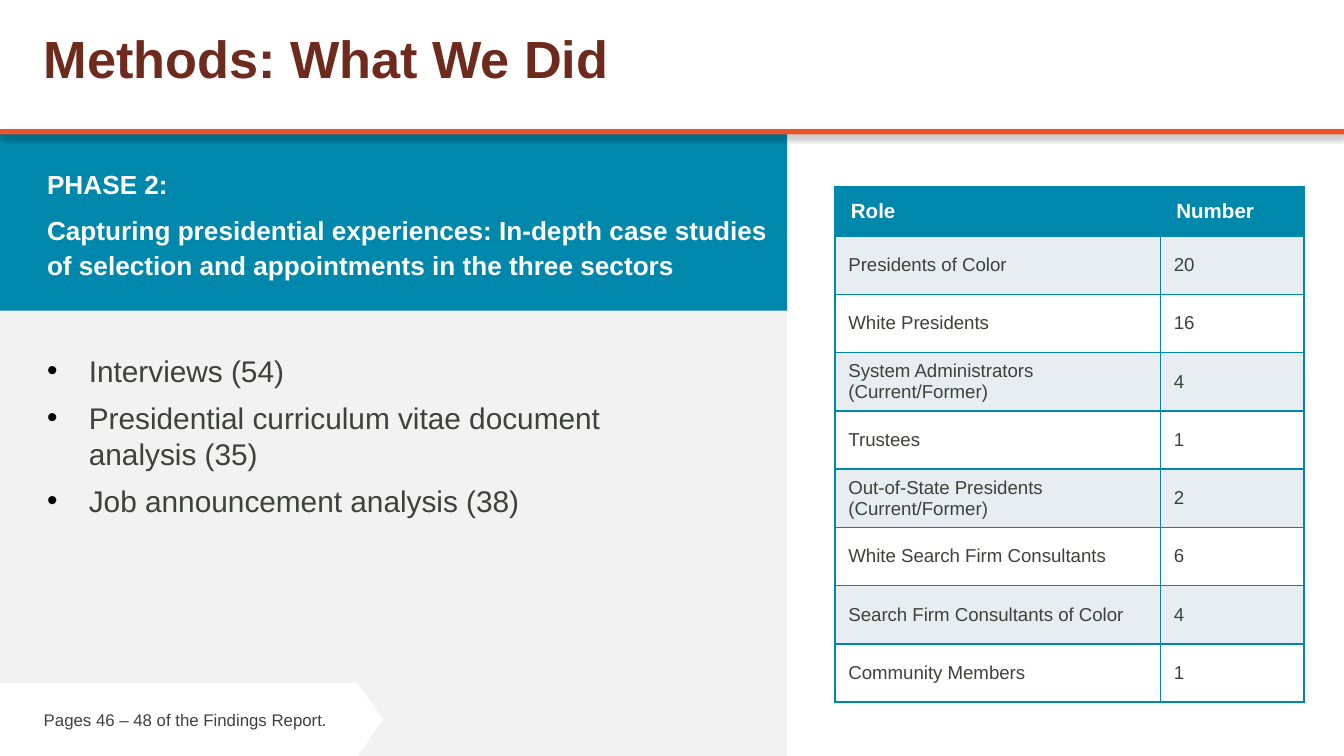
from lxml.etree import SubElement
from pptx import Presentation
from pptx.dml.color import RGBColor
from pptx.enum.shapes import MSO_SHAPE as SHAPE
from pptx.enum.text import MSO_ANCHOR as ANCHOR, PP_ALIGN as ALIGN
from pptx.oxml import parse_xml
from pptx.oxml.ns import nsdecls, qn
from pptx.util import Cm, Pt

COLORS = {
    "teal": "0088AC", "orange": "E95429", "brown": "6E2A1D", "text": "3E413C",
    "panel": "F2F2F2", "band": "E7EDF1", "white": "FFFFFF", "black": "000000",
}
WIDTH, HEIGHT = 25.4, 14.28
PANEL_WIDTH, RULE_TOP, RULE_HEIGHT = 14.88, 2.44, 0.1
BODY_TOP = 2.49

TITLE = {"size": Pt(28), "bold": True, "color": "brown"}
PHASE = {"size": Pt(14), "bold": True, "color": "white"}
BULLET = {"size": Pt(16), "color": "text"}
FOOTNOTE = {"size": Pt(9), "color": "text"}
HEADER = {"size": Pt(11), "bold": True, "color": "white"}
CELL = {"size": Pt(10), "bold": False, "color": "text"}

PHASE_LINES = [
    "PHASE 2:",
    "Capturing presidential experiences: In-depth case studies of selection "
    "and appointments in the three sectors",
]
METHODS = [
    "Interviews (54)",
    "Presidential curriculum vitae document analysis (35)",
    "Job announcement analysis (38)",
]
ROLES = [
    ("Role", "Number"),
    ("Presidents of Color", "20"),
    ("White Presidents", "16"),
    ("System Administrators (Current/Former)", "4"),
    ("Trustees", "1"),
    ("Out-of-State Presidents (Current/Former)", "2"),
    ("White Search Firm Consultants", "6"),
    ("Search Firm Consultants of Color", "4"),
    ("Community Members", "1"),
]


def rgb(name):
    return RGBColor.from_string(COLORS[name])


def set_attrs(obj, values):
    for name, value in values.items():
        setattr(obj, name, value)


def set_font(font, style):
    font.name = "Arial"
    for name, value in style.items():
        if name == "color":
            font.color.rgb = rgb(value)
        else:
            setattr(font, name, value)


def write(tf, lines, style, **paragraph_format):
    for i, line in enumerate(lines):
        p = tf.paragraphs[0] if i == 0 else tf.add_paragraph()
        set_attrs(p, paragraph_format)
        r = p.add_run()
        r.text = line
        set_font(r.font, style)


def set_frame(tf, margins, anchor):
    """Margins are left, top, right and bottom in centimetres."""
    sides = ("margin_left", "margin_top", "margin_right", "margin_bottom")
    set_attrs(tf, dict(zip(sides, map(Cm, margins))))
    set_attrs(tf, {"word_wrap": True, "vertical_anchor": anchor})


def add_block(s, kind, box, color):
    sp = s.shapes.add_shape(kind, *map(Cm, box))
    sp.shadow.inherit = False
    sp.fill.solid()
    sp.fill.fore_color.rgb = rgb(color)
    sp.line.fill.background()
    return sp


def add_drop_shadow(sp):
    effects = sp._element.spPr.find(qn("a:effectLst"))
    effects.append(parse_xml(
        f'<a:outerShdw {nsdecls("a")} blurRad="{Pt(3.1)}" dist="{Pt(1.8)}" '
        'dir="5400000" algn="t" rotWithShape="0">'
        f'<a:srgbClr val="{COLORS["black"]}"><a:alpha val="35000"/></a:srgbClr>'
        '</a:outerShdw>'))


def add_bullet(p):
    pPr = p._p.get_or_add_pPr()
    pPr.set("marL", str(Cm(0.79)))
    pPr.set("indent", str(-Cm(0.79)))
    color = SubElement(pPr, qn("a:buClr"))
    SubElement(color, qn("a:srgbClr"), val=COLORS["black"])
    SubElement(pPr, qn("a:buFont"), typeface="Arial")
    SubElement(pPr, qn("a:buChar"), char="•")


def set_borders(cell, color):
    tcPr = cell._tc.get_or_add_tcPr()
    for i, side in enumerate(("lnL", "lnR", "lnT", "lnB")):
        tcPr.insert(i, parse_xml(
            f'<a:{side} {nsdecls("a")} w="{Pt(1)}"><a:solidFill>'
            f'<a:srgbClr val="{COLORS[color]}"/></a:solidFill></a:{side}>'))


def add_title(s):
    title = s.shapes.title
    box = map(Cm, (0.58, 0.18, 17.78, 1.8))
    set_attrs(title, dict(zip(("left", "top", "width", "height"), box)))
    set_frame(title.text_frame, (0.25, 0.13, 0.25, 0.13), ANCHOR.MIDDLE)
    write(title.text_frame, ["Methods: What We Did"], TITLE, alignment=ALIGN.LEFT)


def add_methods(s):
    tf = s.shapes.add_textbox(*map(Cm, (0.89, 6.53, 12.12, 3.38))).text_frame
    set_frame(tf, (0, 0.13, 0.25, 0.13), ANCHOR.TOP)
    write(tf, METHODS, BULLET, space_after=Pt(6))
    for p in tf.paragraphs:
        add_bullet(p)


def add_phase(s):
    sp = add_block(s, SHAPE.RECTANGLE, (0, BODY_TOP, PANEL_WIDTH, 3.38), "teal")
    set_frame(sp.text_frame, (0.89, 0.64, 0.25, 0.13), ANCHOR.TOP)
    write(sp.text_frame, PHASE_LINES, PHASE, alignment=ALIGN.LEFT,
          line_spacing=1.1, space_after=Pt(6))


def add_footnote(s):
    top = 12.9
    sp = add_block(s, SHAPE.PENTAGON, (0, top, 7.24, HEIGHT - top), "white")
    sp.adjustments[0] = 0.345
    set_frame(sp.text_frame, (0.25, 0.13, 0.25, 0.13), ANCHOR.MIDDLE)
    write(sp.text_frame, ["Pages 46 – 48 of the Findings Report."], FOOTNOTE,
          alignment=ALIGN.CENTER)


def add_role_table(s):
    widths = (6.15, 2.71)
    heights = [0.94] + [1.1] * (len(ROLES) - 1)
    box = (15.78, 3.52, sum(widths), sum(heights))
    table = s.shapes.add_table(len(ROLES), len(widths), *map(Cm, box)).table
    set_attrs(table, {"first_row": False, "horz_banding": False})
    for column, width in zip(table.columns, widths):
        column.width = Cm(width)
    for i, (row, height, texts) in enumerate(zip(table.rows, heights, ROLES)):
        row.height = Cm(height)
        fill = "teal" if i == 0 else "band" if i % 2 else "white"
        for cell, text in zip(row.cells, texts):
            cell.vertical_anchor = ANCHOR.MIDDLE
            if i == 0:
                set_attrs(cell, {"margin_left": Cm(0.3), "margin_top": Cm(0.05),
                                 "margin_right": Cm(0.05), "margin_bottom": Cm(0.05)})
            cell.fill.solid()
            cell.fill.fore_color.rgb = rgb(fill)
            set_borders(cell, "teal")
            write(cell.text_frame, [text], CELL if i else HEADER)


def main():
    prs = Presentation()
    set_attrs(prs, {"slide_width": Cm(WIDTH), "slide_height": Cm(HEIGHT)})
    s = prs.slides.add_slide(prs.slide_layouts[5])
    add_title(s)
    add_block(s, SHAPE.RECTANGLE,
              (0, RULE_TOP, PANEL_WIDTH, HEIGHT - RULE_TOP), "panel")
    add_block(s, SHAPE.RECTANGLE,
              (PANEL_WIDTH, BODY_TOP, WIDTH - PANEL_WIDTH, HEIGHT - BODY_TOP), "white")
    add_role_table(s)
    add_methods(s)
    add_phase(s)
    rule = add_block(s, SHAPE.RECTANGLE, (0, RULE_TOP, WIDTH, RULE_HEIGHT), "orange")
    add_drop_shadow(rule)
    add_footnote(s)
    prs.save("out.pptx")


if __name__ == "__main__":
    main()
